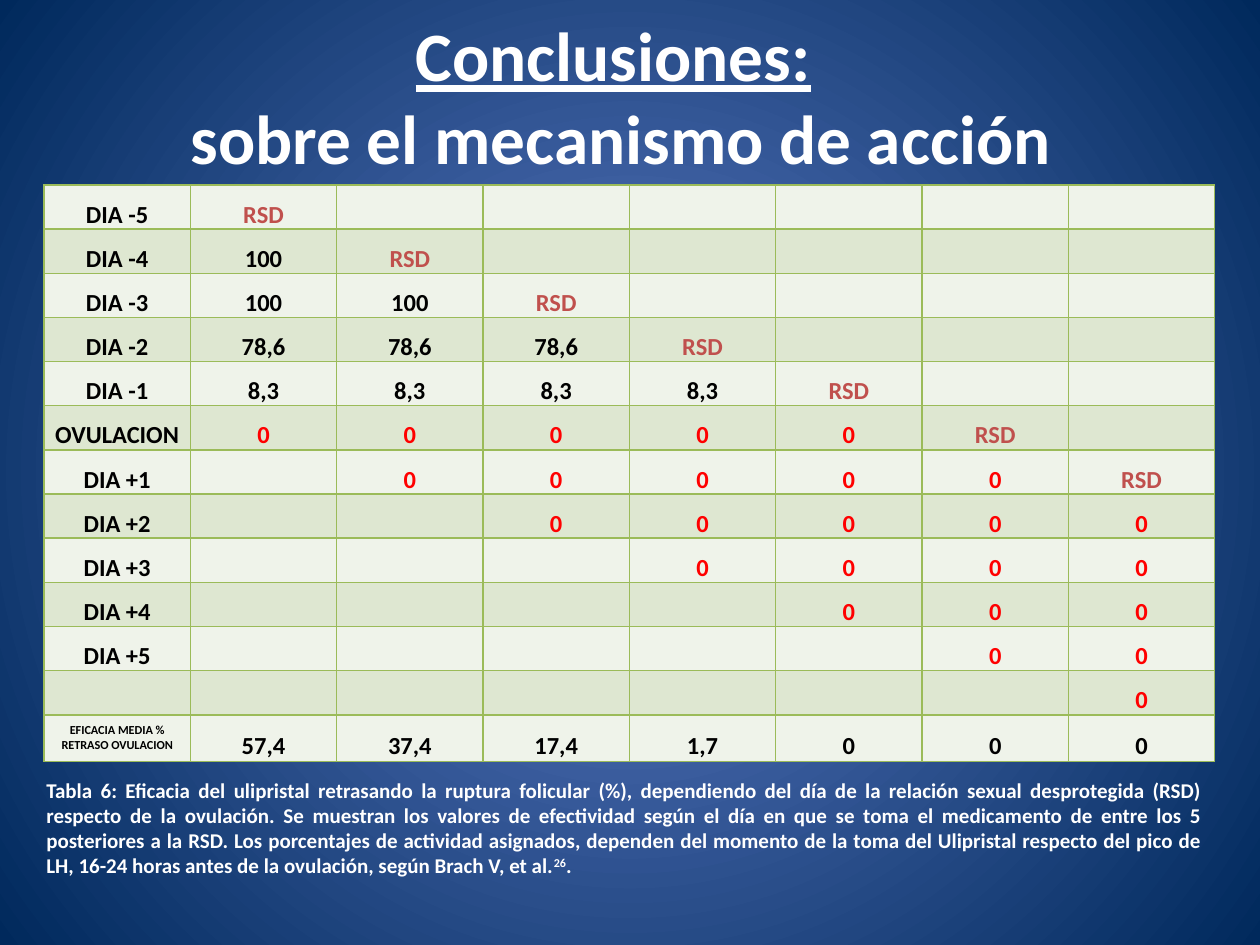
import lxml.etree
import pptx
import pptx.dml.color
import pptx.enum.text
import pptx.oxml
import pptx.oxml.ns
import pptx.util

EMU_PER_PX = 914400 / 126
FONT = "Calibri"
COLORS = {
    "glow": "5E7CC5",
    "navy": "00295C",
    "white": "FFFFFF",
    "black": "000000",
    "rsd": "C0504D",
    "zero": "FF0000",
    "border": "9BBB59",
    "light_row": "EFF3EA",
    "dark_row": "DEE7D1",
}
DAYS = ["DIA -5", "DIA -4", "DIA -3", "DIA -2", "DIA -1", "OVULACION",
        "DIA +1", "DIA +2", "DIA +3", "DIA +4", "DIA +5", ""]
DELAY_BY_ROW = {1: "100", 2: "100", 3: "78,6", 4: "8,3"}
MEANS = ["57,4", "37,4", "17,4", "1,7", "0", "0", "0"]
DOSE_DAYS = 5
CAPTION = (
    "Tabla 6: Eficacia del ulipristal retrasando la ruptura folicular (%), "
    "dependiendo del día de la relación sexual desprotegida (RSD) respecto de la "
    "ovulación. Se muestran los valores de efectividad según el día en que se toma "
    "el medicamento de entre los 5 posteriores a la RSD. Los porcentajes de actividad "
    "asignados, dependen del momento de la toma del Ulipristal respecto del pico de "
    "LH, 16-24 horas antes de la ovulación, según Brach V, et al."
)


def px(length):
    """Turn pixels into EMU."""
    return pptx.util.Emu(round(length * EMU_PER_PX))


def rgb(name):
    """Look up a named colour."""
    return pptx.dml.color.RGBColor.from_string(COLORS[name])


def add_run(paragraph, text, size, color):
    """Append a bold run and return it."""
    run = paragraph.add_run()
    run.text = text
    run.font.name = FONT
    run.font.size = pptx.util.Pt(size)
    run.font.bold = True
    run.font.color.rgb = rgb(color)
    return run


def add_paragraph_box(slide, box, alignment):
    """Add a wrapping, middle-anchored text box and return its paragraph."""
    frame = slide.shapes.add_textbox(*map(px, box)).text_frame
    frame.word_wrap = True
    frame.vertical_anchor = pptx.enum.text.MSO_ANCHOR.MIDDLE
    paragraph = frame.paragraphs[0]
    paragraph.alignment = alignment
    return paragraph


def paint_background(slide):
    """Fill the slide with a circular gradient."""
    fill = slide.background.fill
    fill.gradient()
    for stop, position, color in zip(fill.gradient_stops, (0, 1), ("glow", "navy")):
        stop.position = position
        stop.color.rgb = rgb(color)
    gradient = slide.background._cSld.find(".//" + pptx.oxml.ns.qn("a:gradFill"))
    gradient.remove(gradient.find(pptx.oxml.ns.qn("a:lin")))
    circle = lxml.etree.SubElement(gradient, pptx.oxml.ns.qn("a:path"), path="circle")
    lxml.etree.SubElement(circle, pptx.oxml.ns.qn("a:fillToRect"),
                          l="50000", t="50000", r="50000", b="50000")


def add_title(slide, box):
    """Place the two-line title."""
    title = add_paragraph_box(slide, box, pptx.enum.text.PP_ALIGN.CENTER)
    add_run(title, "Conclusiones:", 39.6, "white").font.underline = True
    add_run(title, " ", 39.6, "white")
    title.add_line_break()
    add_run(title, "sobre el mecanismo de acción", 39.6, "white")


def border_cell(cell):
    """Draw a thin line on all four sides of a cell."""
    properties = cell._tc.get_or_add_tcPr()
    for index, side in enumerate(("lnL", "lnR", "lnT", "lnB")):
        properties.insert(index, pptx.oxml.parse_xml(
            f'<a:{side} {pptx.oxml.ns.nsdecls("a")} w="12700"><a:solidFill>'
            f'<a:srgbClr val="{COLORS["border"]}"/></a:solidFill></a:{side}>'))


def efficacy_entry(row, column):
    """Return the text and colour of one cell in the staircase of doses."""
    if column == 0:
        return DAYS[row], "black"
    days_after = row - column + 1
    if days_after == 0:
        return "RSD", "rsd"
    if not 0 < days_after <= DOSE_DAYS:
        return "", "black"
    if row in DELAY_BY_ROW:
        return DELAY_BY_ROW[row], "black"
    return "0", "zero"


def fill_cell(cell, text, color, row_color, size=14, spacing=1.5):
    """Format one table cell and write its text."""
    cell.fill.solid()
    cell.fill.fore_color.rgb = rgb(row_color)
    border_cell(cell)
    cell.margin_left = cell.margin_right = px(9)
    cell.margin_top = cell.margin_bottom = 0
    cell.vertical_anchor = pptx.enum.text.MSO_ANCHOR.MIDDLE
    if text:
        paragraph = cell.text_frame.paragraphs[0]
        paragraph.alignment = pptx.enum.text.PP_ALIGN.CENTER
        paragraph.line_spacing = spacing
        add_run(paragraph, text, size, color)


def add_efficacy_table(slide, box):
    """Place the efficacy table with its row of means."""
    left, top, width, height = box
    day_count, column_count = len(DAYS), len(MEANS) + 1
    table = slide.shapes.add_table(day_count + 1, column_count, *map(px, box)).table
    table.first_row = table.horz_banding = False
    day_height = height // (day_count + 1)
    for column in table.columns:
        column.width = px(width / column_count)
    for row in table.rows:
        row.height = px(day_height)
    table.rows[day_count].height = px(height - day_count * day_height)
    for row in range(day_count):
        row_color = "dark_row" if row % 2 else "light_row"
        for column in range(column_count):
            fill_cell(table.cell(row, column), *efficacy_entry(row, column), row_color)
    fill_cell(table.cell(day_count, 0), "EFICACIA MEDIA % RETRASO OVULACION",
              "black", "light_row", 7, 1.0)
    for column, mean in enumerate(MEANS, 1):
        fill_cell(table.cell(day_count, column), mean, "black", "light_row")


def add_caption(slide, box):
    """Place the justified caption with its superscript reference."""
    caption = add_paragraph_box(slide, box, pptx.enum.text.PP_ALIGN.JUSTIFY)
    add_run(caption, CAPTION, 12, "white")
    reference = add_run(caption, "26", 12, "white")
    reference.font._element.set("baseline", "30000")
    add_run(caption, ".", 12, "white")


def main():
    """Build and save the slide."""
    presentation = pptx.Presentation()
    presentation.slide_width, presentation.slide_height = px(1260), px(945)
    slide = presentation.slides.add_slide(presentation.slide_layouts[6])
    paint_background(slide)
    add_title(slide, (54, 27, 1134, 137))
    add_efficacy_table(slide, (44, 185, 1171, 575))
    add_caption(slide, (34, 770, 1181, 115))
    presentation.save("out.pptx")


if __name__ == "__main__":
    main()
